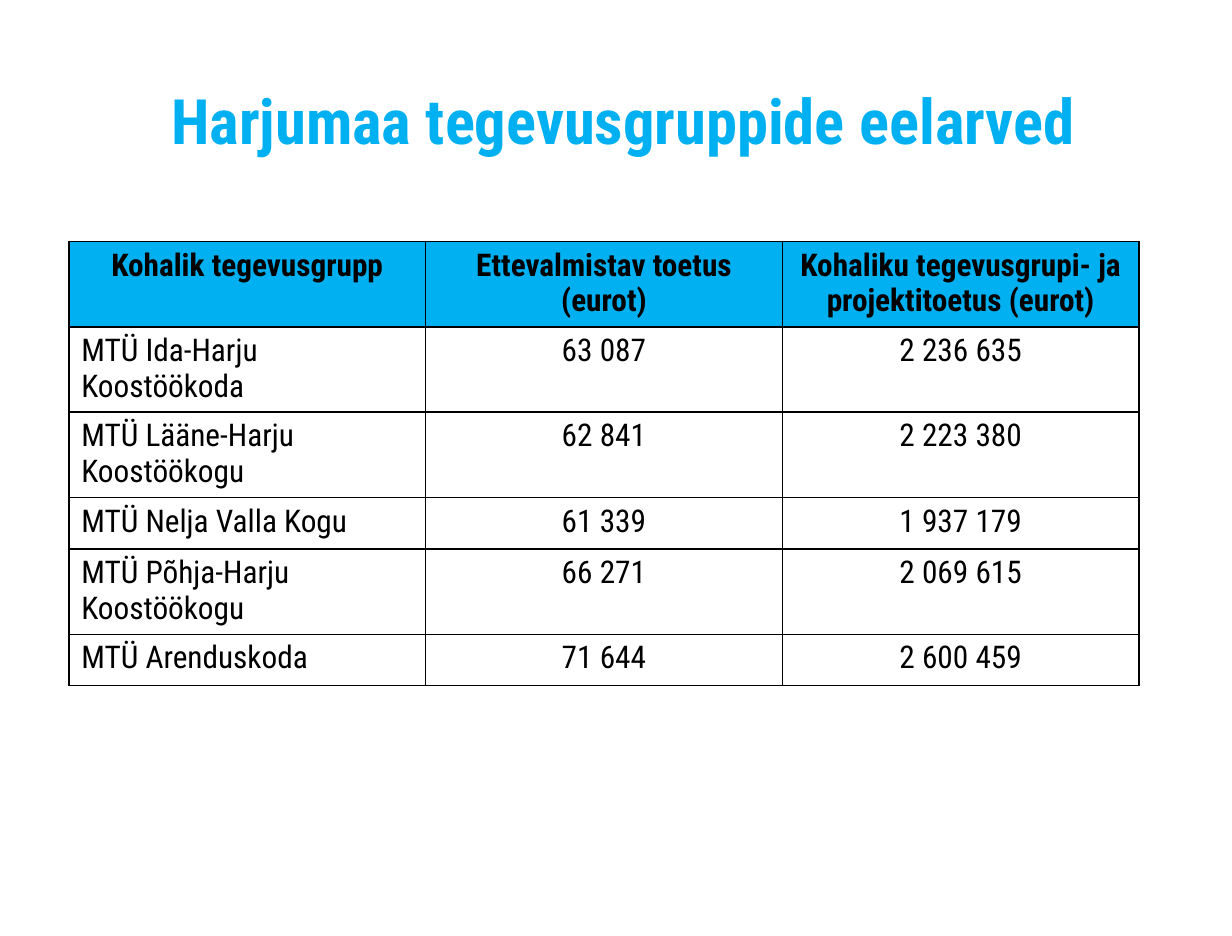
from lxml import etree
from pptx import Presentation
from pptx.dml.color import RGBColor
from pptx.enum.text import MSO_ANCHOR, PP_ALIGN
from pptx.oxml.ns import qn
from pptx.util import Inches, Pt

LEFT, CENTER = PP_ALIGN.LEFT, PP_ALIGN.CENTER
MIDDLE = MSO_ANCHOR.MIDDLE

BLUE = RGBColor(0x00, 0xB0, 0xF0)
BLACK = RGBColor(0x00, 0x00, 0x00)
FONT = "Roboto Condensed"
ROW_HEIGHT = 0.41
CM_PER_INCH = 2.54

HEADINGS = (
    "Kohalik tegevusgrupp",
    "Ettevalmistav toetus (eurot)",
    "Kohaliku tegevusgrupi- ja projektitoetus (eurot)",
)
BUDGETS = (
    ("MTÜ Ida-Harju Koostöökoda", "63 087", "2 236 635"),
    ("MTÜ Lääne-Harju Koostöökogu", "62 841", "2 223 380"),
    ("MTÜ Nelja Valla Kogu", "61 339", "1 937 179"),
    ("MTÜ Põhja-Harju Koostöökogu", "66 271", "2 069 615"),
    ("MTÜ Arenduskoda", "71 644", "2 600 459"),
)


def style_paragraph(paragraph, size, color, bold, alignment, line_spacing):
    paragraph.alignment = alignment
    paragraph.line_spacing = line_spacing
    font = paragraph.font
    font.name = FONT
    font.size = Pt(size)
    font.bold = bold
    font.color.rgb = color


def add_borders(cell):
    properties = cell._tc.get_or_add_tcPr()
    for side in ("a:lnL", "a:lnR", "a:lnT", "a:lnB"):
        line = etree.SubElement(properties, qn(side), w=str(Pt(1)))
        fill = etree.SubElement(line, qn("a:solidFill"))
        etree.SubElement(fill, qn("a:srgbClr"), val=str(BLACK))


def add_title(slide, left, top, width, height):
    box = slide.shapes.add_textbox(
        Inches(left), Inches(top), Inches(width), Inches(height))
    frame = box.text_frame
    frame.word_wrap = True
    frame.vertical_anchor = MIDDLE
    frame.margin_left = frame.margin_right = 0
    frame.margin_top = frame.margin_bottom = 0
    frame.text = "Harjumaa tegevusgruppide eelarved"
    style_paragraph(frame.paragraphs[0], 36, BLUE, True, CENTER, 0.77)


def add_budget_table(slide, left, top, width):
    rows = (HEADINGS,) + BUDGETS
    table = slide.shapes.add_table(
        len(rows), len(HEADINGS), Inches(left), Inches(top),
        Inches(width), Inches(ROW_HEIGHT * len(rows))).table
    table.first_row = False
    table.horz_banding = False

    for row_index, values in enumerate(rows):
        is_heading = row_index == 0
        for column_index, value in enumerate(values):
            cell = table.cell(row_index, column_index)
            cell.text = value
            is_name = column_index == 0 and not is_heading
            style_paragraph(cell.text_frame.paragraphs[0], 18, BLACK,
                            is_heading, LEFT if is_name else CENTER, 0.97)
            # Borders come before the fill in the cell properties
            add_borders(cell)
            if is_heading:
                cell.fill.solid()
                cell.fill.fore_color.rgb = BLUE
            else:
                cell.fill.background()


def main():
    presentation = Presentation()
    # The page measures 25 by 19 centimetres
    presentation.slide_width = Inches(25 / CM_PER_INCH)
    presentation.slide_height = Inches(19 / CM_PER_INCH)
    slide = presentation.slides.add_slide(presentation.slide_layouts[6])

    add_title(slide, 0.55, 0.33, 8.86, 1.38)
    add_budget_table(slide, 0.55, 1.93, 8.55)

    presentation.save("out.pptx")


if __name__ == "__main__":
    main()
